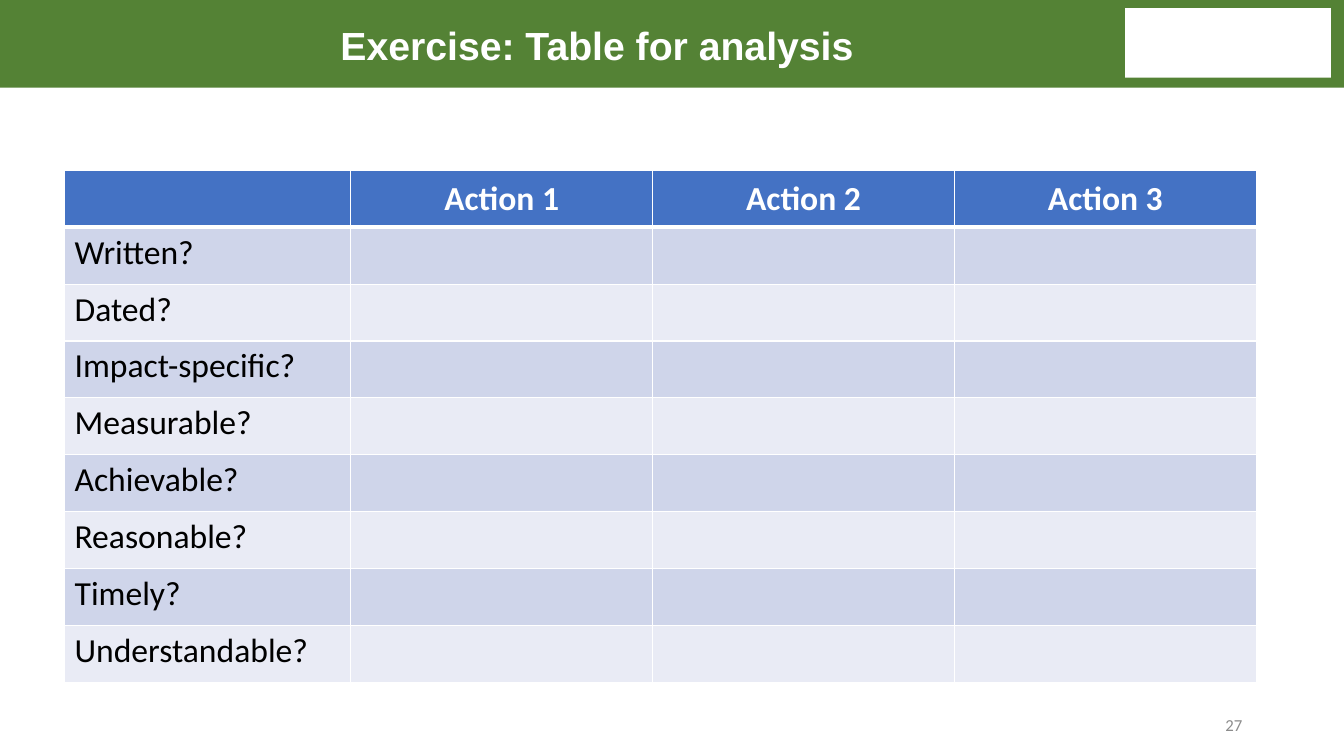
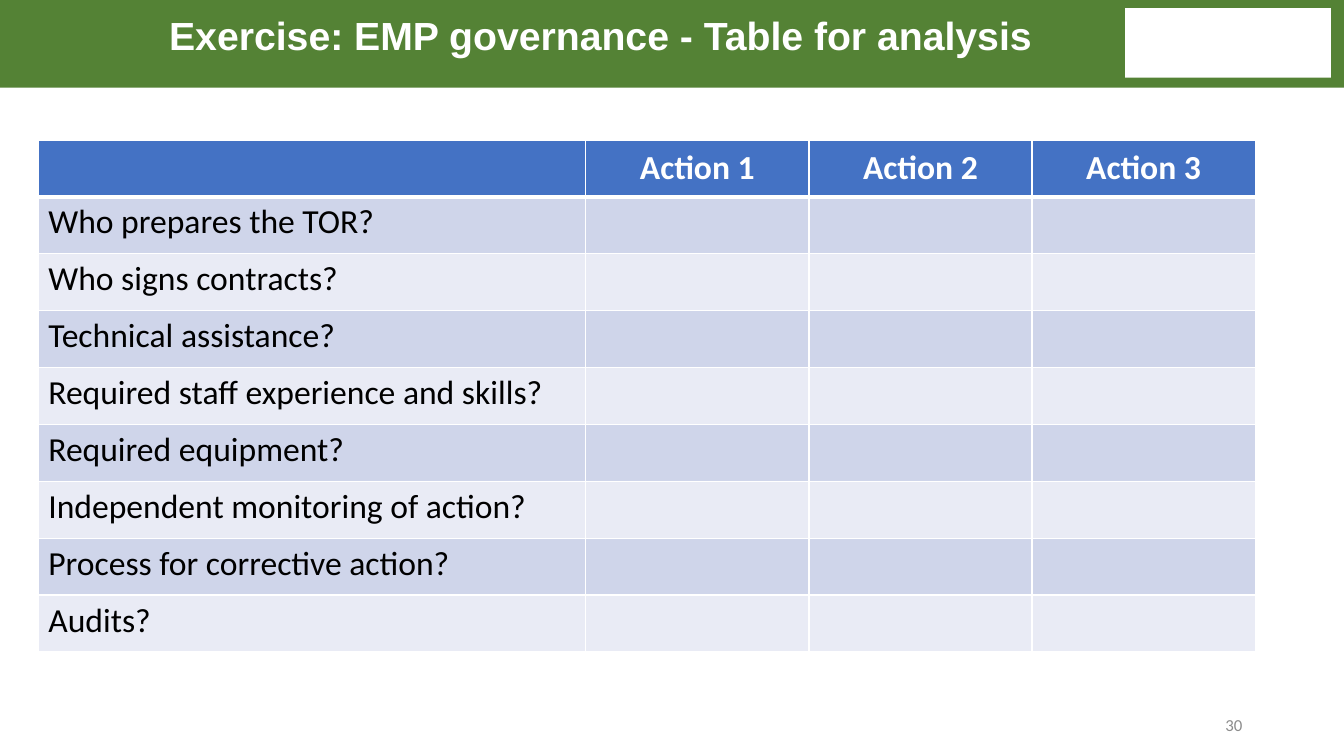
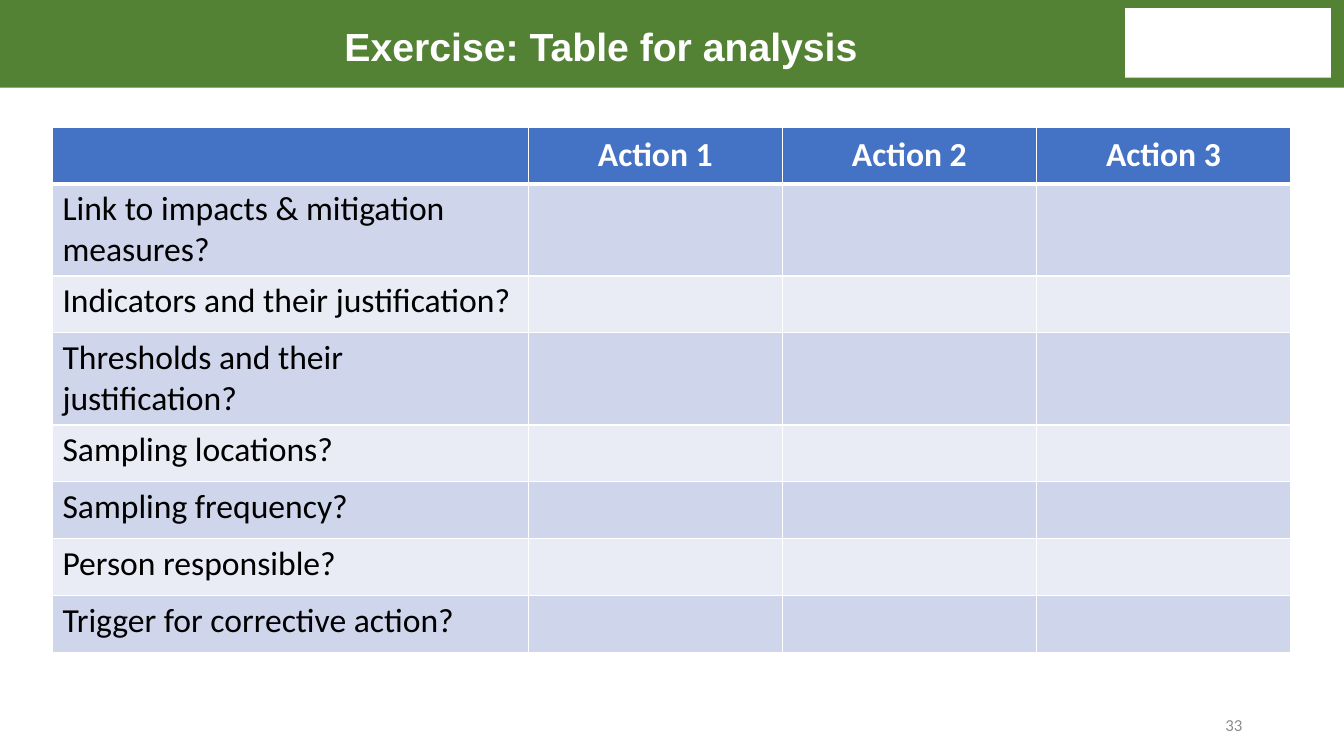
from lxml import etree
from pptx import Presentation
from pptx.dml.color import RGBColor
from pptx.enum import shapes, text
from pptx.oxml import ns
from pptx.util import Inches, Pt

WHITE, BLACK, GREY = "FFFFFF", "000000", "8C8C8C"
GREEN, BLUE = "548235", "4472C4"
ROW_FILLS = ("CFD5EA", "E9EBF5")
HEADINGS = ("", "Action 1", "Action 2", "Action 3")
ROW_HEIGHT = 5.08 / 9

EXERCISES = [
    {
        "number": "27",
        "title": "Exercise: Table for analysis",
        "title_box": (0.89, 0.1, 10.06, 0.74),
        "table_box": (0.64, 1.69, 11.82),
        "question_width": 2.84,
        "questions": ("Written?", "Dated?", "Impact-specific?", "Measurable?",
                      "Achievable?", "Reasonable?", "Timely?", "Understandable?"),
    },
    {
        "number": "30",
        "title": "Exercise: EMP governance - Table for analysis",
        "title_box": (0.85, 0, 10.21, 0.74),
        "table_box": (0.38, 1.39, 12.07),
        "question_width": 5.43,
        "questions": ("Who prepares the TOR?", "Who signs contracts?",
                      "Technical assistance?", "Required staff experience and skills?",
                      "Required equipment?", "Independent monitoring of action?",
                      "Process for corrective action?", "Audits?"),
    },
    {
        "number": "33",
        "title": "Exercise: Table for analysis",
        "title_box": (0.85, 0.11, 10.22, 0.74),
        "table_box": (0.52, 1.26, 12.28),
        "question_width": 4.72,
        "questions": ("Link to impacts & mitigation measures?",
                      "Indicators and their justification?",
                      "Thresholds and their justification?", "Sampling locations?",
                      "Sampling frequency?", "Person responsible?",
                      "Trigger for corrective action?"),
    },
]


def color(value):
    """Turn a hex string into a colour."""
    return RGBColor.from_string(value)


def write(paragraph, words, name, size, fill, bold=False, align=None):
    """Fill a paragraph with words in one font."""
    paragraph.text = words
    paragraph.alignment = align
    paragraph.font.name = name
    paragraph.font.size = Pt(size)
    paragraph.font.bold = bold
    paragraph.font.color.rgb = color(fill)


def add_layout_rectangle(slide, layout, position, box, fill):
    """Put a plain rectangle on the layout, behind its placeholders."""
    shape = slide.shapes.add_shape(shapes.MSO_SHAPE.RECTANGLE, *map(Inches, box))
    shape.shadow.inherit = False
    shape.fill.solid()
    shape.fill.fore_color.rgb = color(fill)
    shape.line.fill.background()
    shape.element.nvSpPr.cNvPr.id = 100 + position
    layout.shapes.element.insert(position, shape.element)


def add_band(slide, layout):
    """Give the layout its green band and the white panel at the right."""
    add_layout_rectangle(slide, layout, 2, (0, -0.03, 13.33, 0.9), GREEN)
    add_layout_rectangle(slide, layout, 3, (11.16, 0.08, 2.04, 0.69), WHITE)


def set_title(slide, words, box):
    """Place and format the slide title."""
    title = slide.shapes.title
    title.left, title.top, title.width, title.height = map(Inches, box)
    frame = title.text_frame
    frame.auto_size = text.MSO_AUTO_SIZE.NONE
    frame.vertical_anchor = text.MSO_ANCHOR.MIDDLE
    write(frame.paragraphs[0], words, "Arial", 28, WHITE, True, text.PP_ALIGN.CENTER)
    frame.paragraphs[0].line_spacing = 0.9


def add_slide_number(slide, number):
    """Write the slide number at the lower right."""
    box = slide.shapes.add_textbox(*map(Inches, (11.54, 7.04, 0.88, 0.31)))
    frame = box.text_frame
    frame.word_wrap = True
    frame.vertical_anchor = text.MSO_ANCHOR.MIDDLE
    write(frame.paragraphs[0], number, "Calibri", 12, GREY, align=text.PP_ALIGN.RIGHT)


def set_borders(cell, top, bottom):
    """Draw white cell borders with the given top and bottom widths."""
    properties = cell._tc.get_or_add_tcPr()
    for side, width in (("L", 1), ("R", 1), ("T", top), ("B", bottom)):
        line = etree.SubElement(properties, ns.qn(f"a:ln{side}"), w=str(Pt(width)))
        fill = etree.SubElement(line, ns.qn("a:solidFill"))
        etree.SubElement(fill, ns.qn("a:srgbClr"), val=WHITE)


def format_cell(cell, words, row):
    """Style one cell as a heading or as part of a banded row."""
    heading = row == 0
    set_borders(cell, 3 if row == 1 else 1, 3 if heading else 1)
    cell.fill.solid()
    cell.fill.fore_color.rgb = color(BLUE if heading else ROW_FILLS[(row - 1) % 2])
    if heading:
        cell.vertical_anchor = text.MSO_ANCHOR.MIDDLE
    write(cell.text_frame.paragraphs[0], words, "Calibri", 24,
          WHITE if heading else BLACK, heading,
          text.PP_ALIGN.CENTER if heading else None)


def add_analysis_table(slide, box, question_width, questions):
    """Add a table with one row per question and one column per action."""
    left, top, width = box
    rows = [HEADINGS] + [(question, "", "", "") for question in questions]
    frame = slide.shapes.add_table(len(rows), len(HEADINGS), Inches(left), Inches(top),
                                   Inches(width), Inches(ROW_HEIGHT * len(rows)))
    table = frame.table
    action_width = (width - question_width) / (len(HEADINGS) - 1)
    for index, column in enumerate(table.columns):
        column.width = Inches(action_width if index else question_width)
    for row, values in enumerate(rows):
        table.rows[row].height = Inches(ROW_HEIGHT)
        for column, words in enumerate(values):
            format_cell(table.cell(row, column), words, row)


def add_exercise(presentation, layout, exercise):
    """Add one exercise slide and return it."""
    slide = presentation.slides.add_slide(layout)
    set_title(slide, exercise["title"], exercise["title_box"])
    add_analysis_table(slide, exercise["table_box"], exercise["question_width"],
                       exercise["questions"])
    add_slide_number(slide, exercise["number"])
    return slide


def main():
    """Build the presentation and save it."""
    presentation = Presentation()
    presentation.slide_width = Inches(13.33)
    presentation.slide_height = Inches(7.5)
    layout = presentation.slide_layouts.get_by_name("Title Only")
    slides = [add_exercise(presentation, layout, exercise) for exercise in EXERCISES]
    add_band(slides[0], layout)
    presentation.save("out.pptx")


if __name__ == "__main__":
    main()
